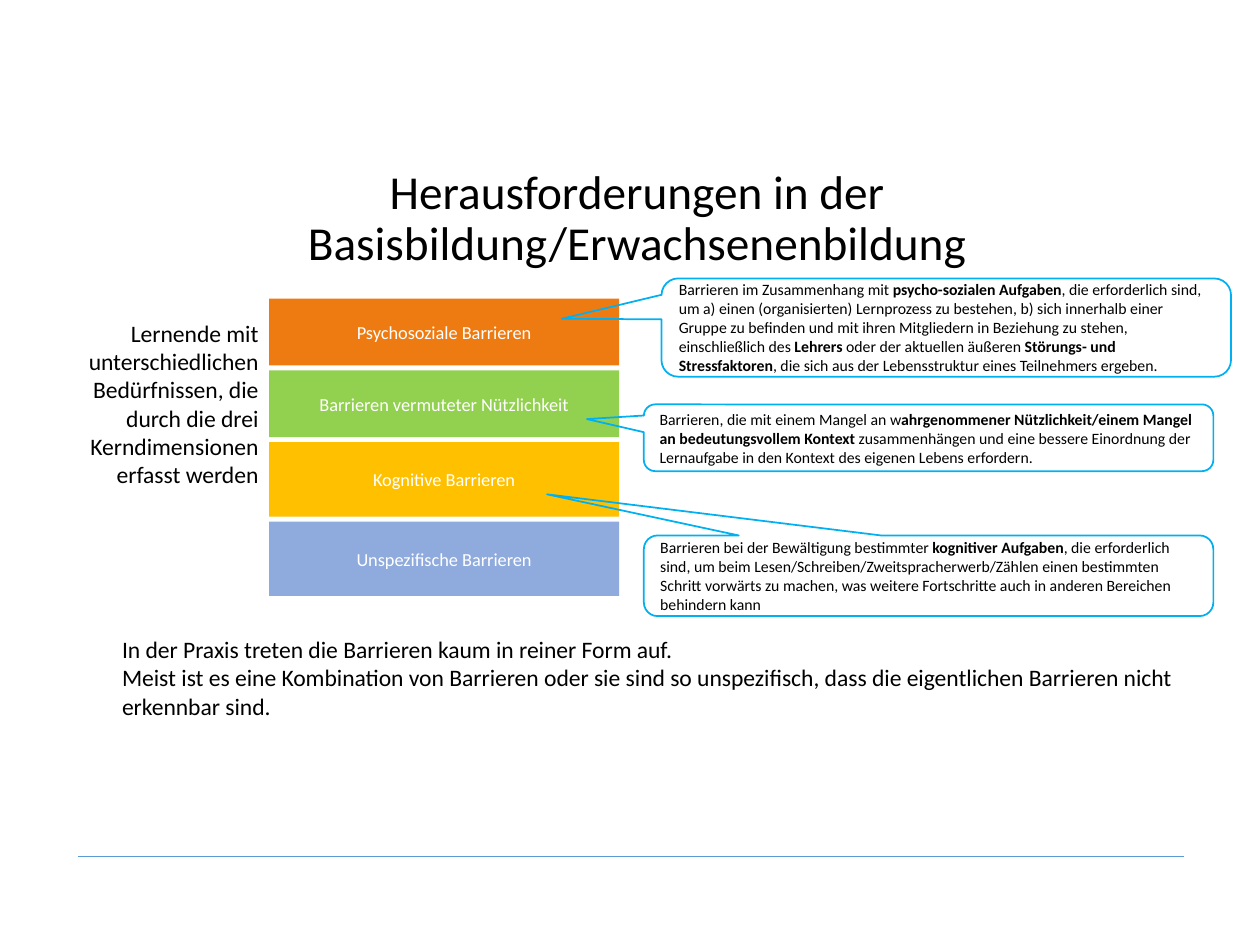
from dataclasses import dataclass

from lxml import etree
from pptx import Presentation
from pptx.dml.color import RGBColor
from pptx.enum.shapes import MSO_CONNECTOR, MSO_SHAPE
from pptx.enum.text import MSO_ANCHOR, MSO_AUTO_SIZE, PP_ALIGN
from pptx.oxml.ns import qn
from pptx.util import Inches, Pt

RECTANGLE = MSO_SHAPE.RECTANGLE
CALLOUT = MSO_SHAPE.ROUNDED_RECTANGULAR_CALLOUT
STRAIGHT = MSO_CONNECTOR.STRAIGHT
MIDDLE = MSO_ANCHOR.MIDDLE
NO_AUTOFIT = MSO_AUTO_SIZE.NONE
LEFT, CENTER, RIGHT = PP_ALIGN.LEFT, PP_ALIGN.CENTER, PP_ALIGN.RIGHT

SLIDE_WIDTH, SLIDE_HEIGHT = Inches(10), Inches(7.5)
COLUMNS, ROWS = 100, 75
TITLE_ONLY = 5


@dataclass(frozen=True)
class Theme:
    """Colours, font and type sizes of the slide."""
    font: str = "Calibri"
    text: str = "000000"
    light: str = "FFFFFF"
    rule: str = "5B9BD5"
    callout: str = "00B0F0"
    title_size: float = 27
    body_size: float = 13.5
    band_size: float = 10.5
    callout_size: float = 9


THEME = Theme()
TITLE = "Herausforderungen in der Basisbildung/Erwachsenenbildung"
LEARNERS = ("Lernende mit unterschiedlichen Bedürfnissen, die durch die drei "
            "Kerndimensionen erfasst werden")
PRACTICE = ("In der Praxis treten die Barrieren kaum in reiner Form auf.\v"
            "Meist ist es eine Kombination von Barrieren oder sie sind so unspezifisch, "
            "dass die eigentlichen Barrieren nicht erkennbar sind.")

BAND_LEFT, BAND_TOP, BAND_WIDTH, BAND_GAP = 21.35, 23.7, 27.8, 0.4
BANDS = [
    ("Psychosoziale Barrieren", "EE7B12", 5.3),
    ("Barrieren vermuteter Nützlichkeit", "92D050", 5.3),
    ("Kognitive Barrieren", "FFC000", 5.9),
    ("Unspezifische Barrieren", "8FAADC", 5.9),
]

CALLOUT_WIDTH = 45.2
CORNER = 0.17
# Each callout: left, top, height, pointer tip, and text with bold parts between asterisks.
CALLOUTS = [
    (52.5, 22.1, 7.8, (-0.675, -0.09),
     "Barrieren im Zusammenhang mit *psycho-sozialen Aufgaben*, die erforderlich sind, "
     "um a) einen (organisierten) Lernprozess zu bestehen, b) sich innerhalb einer Gruppe "
     "zu befinden und mit ihren Mitgliedern in Beziehung zu stehen, einschließlich des "
     "*Lehrers* oder der aktuellen äußeren *Störungs- und Stressfaktoren*, die sich aus "
     "der Lebensstruktur eines Teilnehmers ergeben."),
    (51.1, 32.1, 5.3, (-0.6, -0.28),
     "Barrieren, die mit einem Mangel an w*ahrgenommener Nützlichkeit/einem Mangel an "
     "bedeutungsvollem Kontext* zusammenhängen und eine bessere Einordnung der "
     "Lernaufgabe in den Kontext des eigenen Lebens erfordern."),
    (51.1, 42.5, 6.4, (-0.67, -1.01),
     "Barrieren bei der Bewältigung bestimmter *kognitiver Aufgaben*, die erforderlich "
     "sind, um beim Lesen/Schreiben/Zweitspracherwerb/Zählen einen bestimmten Schritt "
     "vorwärts zu machen, was weitere Fortschritte auch in anderen Bereichen behindern kann"),
]


def grid(left, top, width, height):
    """Turn columns and rows into slide lengths."""
    column, row = SLIDE_WIDTH / COLUMNS, SLIDE_HEIGHT / ROWS
    return [round(length) for length in
            (left * column, top * row, width * column, height * row)]


def write(shape, text, size, color, align):
    """Fill a shape with one paragraph, with bold parts between asterisks."""
    frame = shape.text_frame
    frame.word_wrap = True
    para = frame.paragraphs[0]
    parts = text.split("*")
    if len(parts) == 1:
        para.text = text
    else:
        for index, part in enumerate(parts):
            span = para.add_run()
            span.text = part
            span.font.bold = index % 2 == 1
    para.alignment = align
    for span in para.runs:
        span.font.name = THEME.font
        span.font.size = Pt(size)
        span.font.color.rgb = RGBColor.from_string(color)
    return para


def add_rule(page):
    """Draw the thin line at the foot of the page."""
    left, top, width, _ = grid(6.2, 68, 87.8, 0)
    rule = page.shapes.add_connector(STRAIGHT, left, top, left + width, top)
    rule.line.color.rgb = RGBColor.from_string(THEME.rule)
    rule.line.width = Pt(0.5)
    etree.SubElement(rule._element.spPr, qn("a:effectLst"))


def add_title(page):
    """Place and format the title placeholder."""
    title = page.shapes.title
    title.left, title.top, title.width, title.height = grid(3.4, 11.2, 94.3, 12.4)
    para = write(title, TITLE, THEME.title_size, THEME.text, CENTER)
    para.line_spacing = 0.9
    title.text_frame.vertical_anchor = MIDDLE
    title.text_frame.auto_size = NO_AUTOFIT


def add_text(page, place, text, align):
    """Add a plain text box."""
    box = page.shapes.add_textbox(*grid(*place))
    write(box, text, THEME.body_size, THEME.text, align)


def add_band(page, top, height, label, color):
    """Add one coloured barrier band."""
    band = page.shapes.add_shape(RECTANGLE, *grid(BAND_LEFT, top, BAND_WIDTH, height))
    band.shadow.inherit = False
    band.fill.solid()
    band.fill.fore_color.rgb = RGBColor.from_string(color)
    band.line.fill.background()
    band.text_frame.vertical_anchor = MIDDLE
    write(band, label, THEME.band_size, THEME.light, CENTER)


def add_callout(page, left, top, height, tip, text):
    """Add an outlined callout whose tip points at a band."""
    callout = page.shapes.add_shape(CALLOUT, *grid(left, top, CALLOUT_WIDTH, height))
    for index, value in enumerate((*tip, CORNER)):
        callout.adjustments[index] = value
    callout.shadow.inherit = False
    callout.fill.background()
    callout.line.color.rgb = RGBColor.from_string(THEME.callout)
    callout.line.width = Pt(1)
    callout.text_frame.vertical_anchor = MIDDLE
    write(callout, text, THEME.callout_size, THEME.text, LEFT)


def main():
    """Build and save the deck."""
    deck = Presentation()
    deck.slide_width, deck.slide_height = SLIDE_WIDTH, SLIDE_HEIGHT
    page = deck.slides.add_slide(deck.slide_layouts[TITLE_ONLY])
    add_rule(page)
    add_title(page)
    top = BAND_TOP
    for label, color, height in BANDS:
        add_band(page, top, height, label, color)
        top += height + BAND_GAP
    add_text(page, (2.2, 24.8, 19.3, 14.6), LEARNERS, RIGHT)
    for callout in CALLOUTS:
        add_callout(page, *callout)
    add_text(page, (8.7, 49.9, 86.2, 7.8), PRACTICE, LEFT)
    deck.save("out.pptx")


if __name__ == "__main__":
    main()
